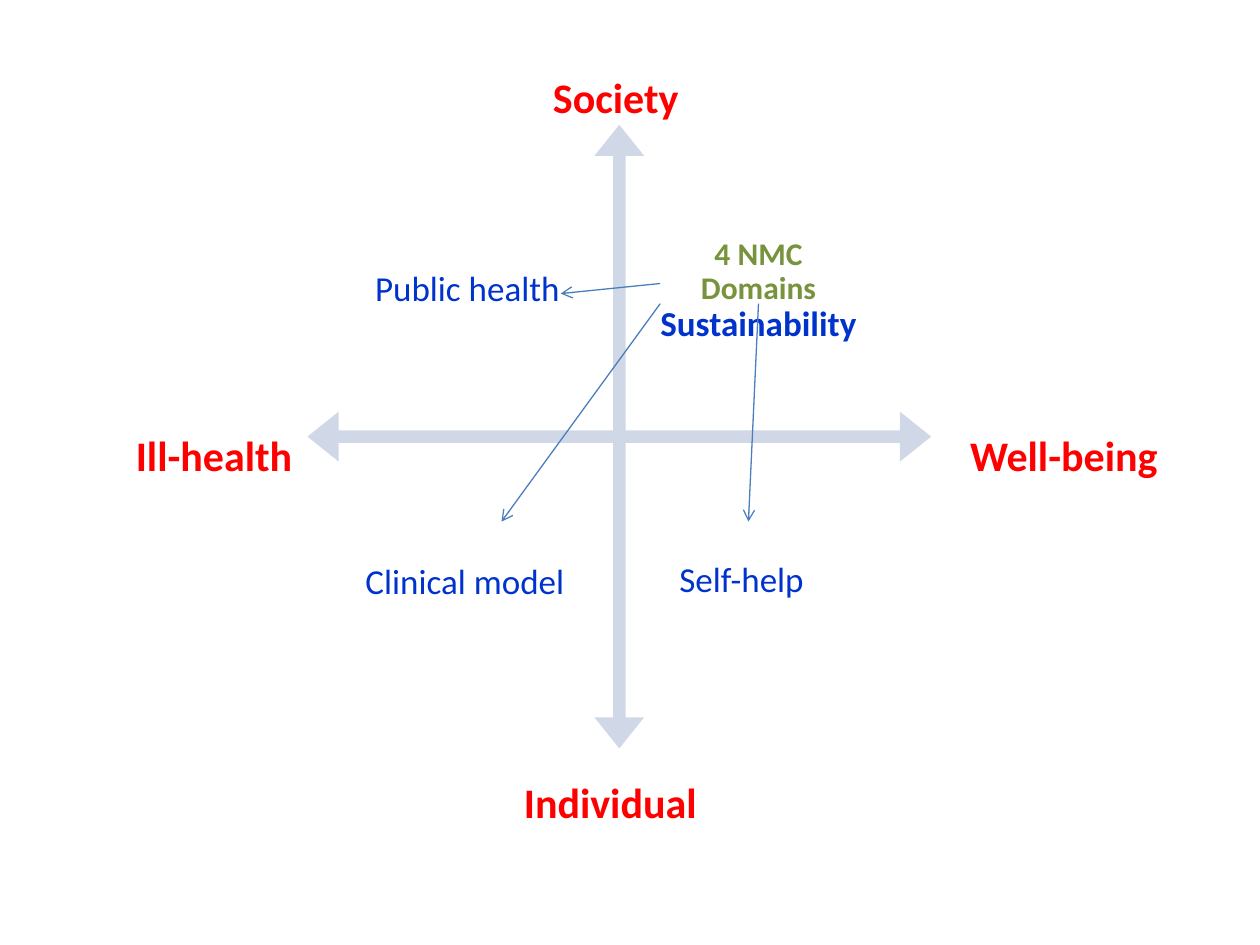
from lxml import etree
from pptx import Presentation
from pptx.dml.color import RGBColor
from pptx.enum.shapes import MSO_CONNECTOR, MSO_SHAPE
from pptx.enum.text import MSO_ANCHOR, MSO_AUTO_SIZE, PP_ALIGN
from pptx.oxml.ns import qn
from pptx.util import Inches, Pt

FONT = "Calibri"
COLORS = {
    "axis": "D0D8E8",
    "panel": "FFFFFF",
    "model": "0033CC",
    "domains": "77933C",
    "label": "FF0000",
    "link": "4B7EBC",
}
QUADRANTS = [
    ((2.72, 1.31, 1.98, 1.98), 0.08, [("Public health", 20, "model", False)]),
    ((5.03, 1.39, 1.98, 1.84), 0.1, [("4 NMC Domains ", 18, "domains", True),
                                     ("Sustainability", 20, "model", True)]),
    ((2.7, 3.64, 1.98, 1.98), 0.08, [("Clinical model", 20, "model", False)]),
    ((5.24, 3.86, 1.29, 1.51), 0.08, [("Self-help", 20, "model", False)]),
]
AXIS_LABELS = [
    ("Ill-health", (0.98, 3.36, 1.46, 0.51)),
    ("Well-being", (7.6, 3.36, 1.71, 0.51)),
    ("Society", (4.29, 0.52, 1.21, 0.51)),
    ("Individual", (4.06, 6.11, 2.2, 0.51)),
]
LINKS = [
    ((5.24, 2.41), (3.98, 4.14)),
    ((6.02, 2.41), (5.94, 4.14)),
    ((5.24, 2.25), (4.45, 2.33)),
]


def color(name):
    """Return the named palette colour."""
    return RGBColor.from_string(COLORS[name])


def style_font(font, size, color_name, bold):
    """Set the face, size, colour and weight of a font."""
    font.name = FONT
    font.size = Pt(size)
    font.bold = bold
    font.color.rgb = color(color_name)


def add_filled_shape(slide, kind, box, color_name):
    """Add a flat preset shape without an outline."""
    shape = slide.shapes.add_shape(kind, *map(Inches, box))
    shape.shadow.inherit = False
    shape.fill.solid()
    shape.fill.fore_color.rgb = color(color_name)
    shape.line.fill.background()
    return shape


def add_axes(slide, box):
    """Add the four-headed arrow that divides the quadrants."""
    axes = add_filled_shape(slide, MSO_SHAPE.QUAD_ARROW, box, "axis")
    for index, value in enumerate((0.02, 0.04, 0.05)):
        axes.adjustments[index] = value


def add_quadrant(slide, box, inset, runs):
    """Add a rounded panel with its centred caption."""
    panel = add_filled_shape(slide, MSO_SHAPE.ROUNDED_RECTANGLE, box, "panel")
    panel.line.color.rgb = color("panel")
    panel.line.width = Pt(2)
    frame = panel.text_frame
    frame.word_wrap = True
    frame.vertical_anchor = MSO_ANCHOR.MIDDLE
    frame.margin_left = frame.margin_right = Inches(inset)
    frame.margin_top = frame.margin_bottom = Inches(0.08)
    paragraph = frame.paragraphs[0]
    paragraph.alignment = PP_ALIGN.CENTER
    paragraph.line_spacing = 0.9
    for text, size, color_name, bold in runs:
        run = paragraph.add_run()
        run.text = text
        style_font(run.font, size, color_name, bold)


def add_axis_label(slide, text, box):
    """Add the name of one end of an axis."""
    frame = slide.shapes.add_textbox(*map(Inches, box)).text_frame
    frame.word_wrap = True
    frame.auto_size = MSO_AUTO_SIZE.SHAPE_TO_FIT_TEXT
    frame.text = text
    style_font(frame.paragraphs[0].font, 24, "label", True)


def add_link(slide, start, end):
    """Add a thin arrow from start to end."""
    link = slide.shapes.add_connector(
        MSO_CONNECTOR.STRAIGHT, *map(Inches, start + end))
    link.line.color.rgb = color("link")
    link.line.width = Pt(0.75)
    etree.SubElement(link.line._get_or_add_ln(), qn("a:tailEnd"), type="arrow")
    etree.SubElement(link._element.spPr, qn("a:effectLst"))


def main():
    """Build and save the health model slide."""
    presentation = Presentation()
    presentation.slide_width = Inches(10)
    presentation.slide_height = Inches(7.5)
    slide = presentation.slides.add_slide(presentation.slide_layouts[6])
    add_axes(slide, (2.44, 0.99, 4.95, 4.95))
    for box, inset, runs in QUADRANTS:
        add_quadrant(slide, box, inset, runs)
    for text, box in AXIS_LABELS:
        add_axis_label(slide, text, box)
    for start, end in LINKS:
        add_link(slide, start, end)
    presentation.save("out.pptx")


if __name__ == "__main__":
    main()
